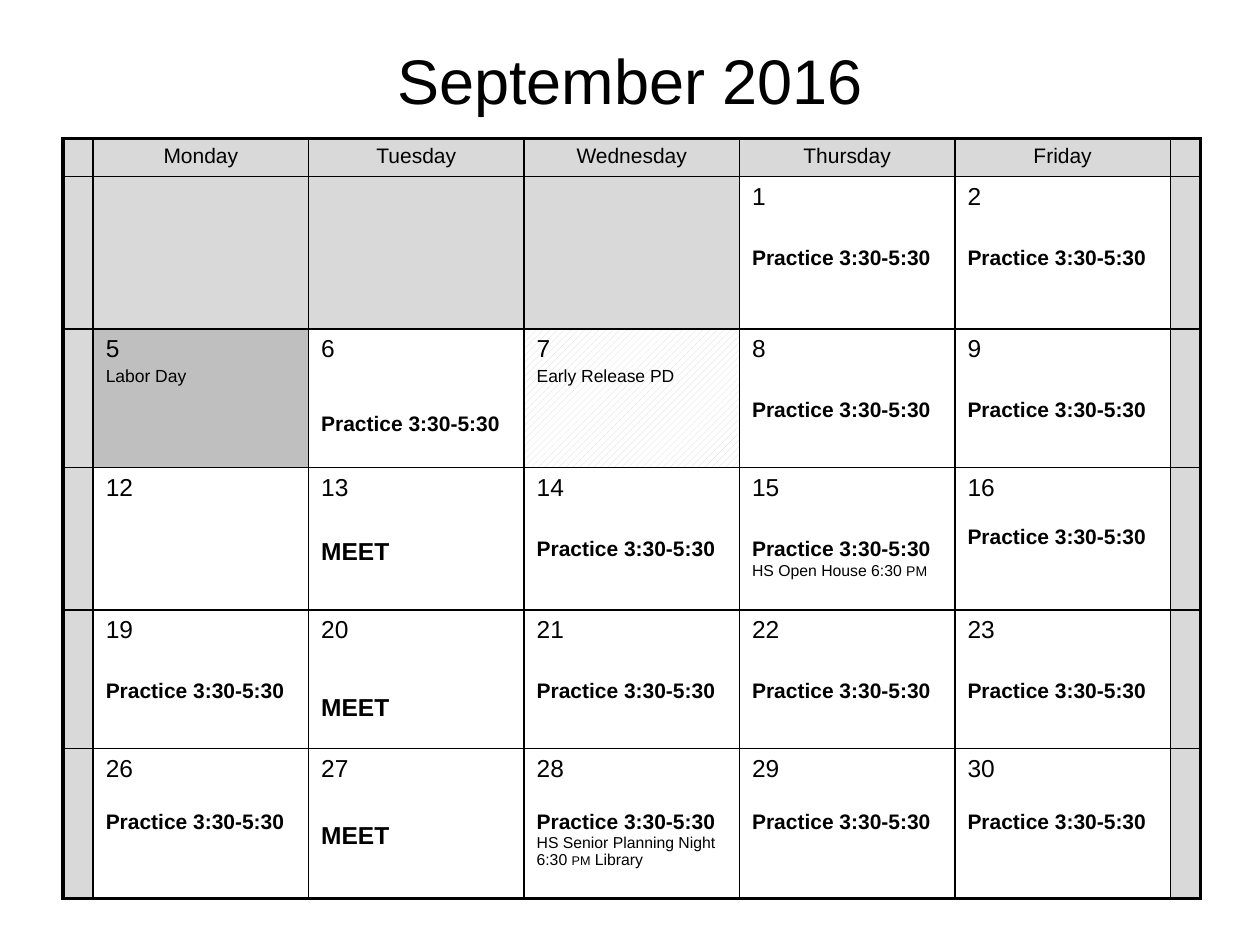
from lxml.etree import SubElement
from pptx import Presentation
from pptx.dml.color import RGBColor
from pptx.enum.dml import MSO_PATTERN
from pptx.enum.text import MSO_ANCHOR, PP_ALIGN
from pptx.oxml.ns import qn
from pptx.util import Inches, Pt

FONT = "Arial"
DAYS = ["Monday", "Tuesday", "Wednesday", "Thursday", "Friday"]
COL_WIDTHS = [0.23] + [1.71] * 5 + [0.23]
ROW_HEIGHTS = [0.3, 1.21, 1.1, 1.13, 1.1, 1.19]
PRACTICE = "Practice 3:30-5:30"
FIRST_WEEKDAY = 3  # the 1st is a Thursday
NO_PRACTICE = {5, 7, 12}
MEETS = {13: 21, 20: 29, 27: 23}  # day: points above the word
PRACTICE_GAPS = {6: 28.5, 16: 14} | dict.fromkeys([26, 28, 29, 30], 16)
# day: (text, size, points above, small capitals, their size, text after)
NOTES = {
    5: ("Labor Day", 10, 2, "", 10, ""),
    7: ("Early Release PD", 10, 2, "", 10, ""),
    15: ("HS Open House 6:30 ", 9, 0, "pm", 10, ""),
    28: ("HS Senior Planning Night 6:30 ", 9, 0, "pm", 9, " Library"),
}


def rgb(color):
    return RGBColor.from_string(color)


def add_line(tf, text, size, bold=False, gap=0):
    """Fill the empty first paragraph, or append one with a gap above it."""
    p = tf.paragraphs[0] if not tf.text else tf.add_paragraph()
    p.text = text
    p.space_before = Pt(gap)
    p.font.name = FONT
    p.font.size = Pt(size)
    p.font.bold = bold
    p.font.color.rgb = rgb("000000")
    return p


prs = Presentation()
prs.slide_width, prs.slide_height = Inches(10), Inches(7.5)
s = prs.slides.add_slide(prs.slide_layouts[6])

# Title
tf = s.shapes.add_textbox(Inches(0.5), Inches(0.3), Inches(9), Inches(0.66)).text_frame
tf.word_wrap = True
tf.vertical_anchor = MSO_ANCHOR.MIDDLE
add_line(tf, "September 2016", 36).alignment = PP_ALIGN.CENTER

# Calendar grid
n_rows, n_cols = len(ROW_HEIGHTS), len(COL_WIDTHS)
table = s.shapes.add_table(n_rows, n_cols, Inches(0.5), Inches(1.1),
                           Inches(sum(COL_WIDTHS)), Inches(sum(ROW_HEIGHTS))).table
for col, width in zip(table.columns, COL_WIDTHS):
    col.width = Inches(width)
for row, height in zip(table.rows, ROW_HEIGHTS):
    row.height = Inches(height)

for i in range(n_rows):
    for j in range(n_cols):
        cell = table.cell(i, j)

        # Borders: heavy around the outside, thin inside
        tcPr = cell._tc.get_or_add_tcPr()
        outer = {"lnL": j == 0, "lnR": j == n_cols - 1,
                 "lnT": i == 0, "lnB": i == n_rows - 1}
        for side, heavy in outer.items():
            ln = SubElement(tcPr, qn(f"a:{side}"), w=str(Pt(2.25 if heavy else 1)))
            fill = SubElement(ln, qn("a:solidFill"))
            SubElement(fill, qn("a:srgbClr"), val="000000")

        # Fill
        weekday = j - 1
        in_week = 0 <= weekday < 5
        day = 7 * (i - 1) + weekday - FIRST_WEEKDAY + 1
        is_day = i > 0 and in_week and day > 0
        if day == 7 and is_day:
            cell.fill.patterned()
            cell.fill.pattern = MSO_PATTERN.WIDE_UPWARD_DIAGONAL
            cell.fill.fore_color.rgb = rgb("D9D9D9")
            cell.fill.back_color.rgb = rgb("FFFFFF")
        else:
            cell.fill.solid()
            color = "BFBFBF" if day == 5 else "FFFFFF"
            cell.fill.fore_color.rgb = rgb(color if is_day else "D9D9D9")

        # Text
        tf = cell.text_frame
        if not is_day:
            if i == 0 and in_week:
                add_line(tf, DAYS[weekday], 12).alignment = PP_ALIGN.CENTER
            else:  # a small empty line keeps the row from growing
                tf.paragraphs[0]._p.get_or_add_endParaRPr().set("sz", "1200")
            continue
        add_line(tf, str(day), 14)
        if day in MEETS:
            add_line(tf, "MEET", 14, True, MEETS[day])
        elif day not in NO_PRACTICE:
            add_line(tf, PRACTICE, 12, True, PRACTICE_GAPS.get(day, 20.5))
        if day in NOTES:
            text, size, gap, caps, caps_size, after = NOTES[day]
            p = add_line(tf, text, size, gap=gap)
            if caps:
                r = p.add_run()
                r.text = caps
                r.font.size = Pt(caps_size)
                r._r.get_or_add_rPr().set("cap", "small")
            if after:
                p.add_run().text = after

prs.save("out.pptx")
